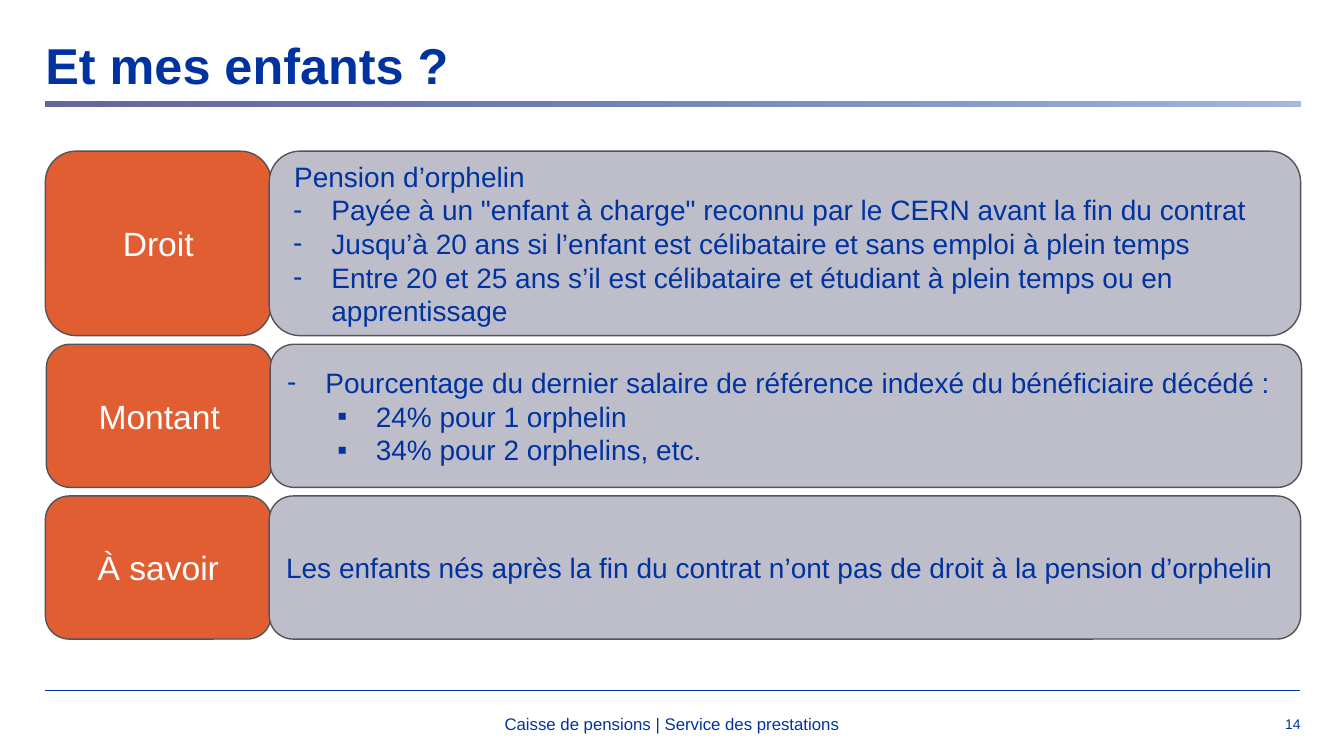
from lxml import etree
from pptx import Presentation
from pptx.dml.color import RGBColor
from pptx.enum.shapes import MSO_CONNECTOR, MSO_SHAPE
from pptx.enum.text import MSO_ANCHOR, PP_ALIGN
from pptx.oxml.ns import qn
from pptx.util import Inches, Pt

LEFT, MID, RIGHT, FULL = PP_ALIGN.LEFT, PP_ALIGN.CENTER, PP_ALIGN.RIGHT, PP_ALIGN.JUSTIFY
TOP, CENTER = MSO_ANCHOR.TOP, MSO_ANCHOR.MIDDLE
RECT, ROUND = MSO_SHAPE.RECTANGLE, MSO_SHAPE.ROUNDED_RECTANGLE
STRAIGHT = MSO_CONNECTOR.STRAIGHT
BLUE = RGBColor(0x00, 0x33, 0xA0)
PURPLE = RGBColor(0x66, 0x66, 0x99)
ORANGE = RGBColor(0xE1, 0x5E, 0x32)
GREY = RGBColor(0xBE, 0xBE, 0xCB)
EDGE = RGBColor(0x53, 0x53, 0x59)
WHITE = RGBColor(0xFF, 0xFF, 0xFF)

TITLE = "Et mes enfants ?"
FOOTER = "Caisse de pensions | Service des prestations"
NUMBER = "14"

# Each line: text, left indent, bullet, level
ROWS = [
    ("Droit", 0.45, 1.83, LEFT, [
        ("Pension d’orphelin", 0.06, None, 0),
        ("Payée à un \"enfant à charge\" reconnu par le CERN avant la fin du contrat", 0.43, "-", 0),
        ("Jusqu’à 20 ans si l’enfant est célibataire et sans emploi à plein temps", 0.43, "-", 0),
        ("Entre 20 et 25 ans s’il est célibataire et étudiant à plein temps ou en apprentissage", 0.43, "-", 0),
    ]),
    ("Montant", 0.46, 1.42, FULL, [
        ("Pourcentage du dernier salaire de référence indexé du bénéficiaire décédé :", 0.38, "-", 0),
        ("24% pour 1 orphelin", 0.88, "▪", 1),
        ("34% pour 2 orphelins, etc.", 0.88, "▪", 1),
    ]),
    ("À savoir", 0.45, 1.42, FULL, [
        ("Les enfants nés après la fin du contrat n’ont pas de droit à la pension d’orphelin", 0, None, 0),
    ]),
]
EDGE_X, WIDTH = 0.45, 12.44
START, GAP = 1.5, 0.085
LABEL_W, STEP, BODY_W = 2.24, 2.22, 10.23
HANG = 0.38

deck = Presentation()
deck.slide_width, deck.slide_height = Inches(13.33), Inches(7.5)
slide = deck.slides.add_slide(deck.slide_layouts[6])
shapes = slide.shapes


def place(x, y, w, h):
    return [Inches(v) for v in (x, y, w, h)]


def write(shape, lines, size=20, color=BLUE, bold=False, align=LEFT,
          anchor=CENTER, inset=None, spacing=None):
    frame = shape.text_frame
    frame.word_wrap = True
    frame.vertical_anchor = anchor
    if inset is not None:
        frame.margin_left = frame.margin_right = Inches(inset)
        frame.margin_top = frame.margin_bottom = Inches(inset)
    if isinstance(lines, str):
        lines = [(lines, 0, None, 0)]
    for i, (text, indent, mark, level) in enumerate(lines):
        para = frame.paragraphs[0] if i == 0 else frame.add_paragraph()
        para.alignment, para.level = align, level
        if spacing:
            para.line_spacing = spacing
        props = para._p.get_or_add_pPr()
        props.set("marL", str(Inches(indent)))
        props.set("indent", str(Inches(-HANG if mark else 0)))
        if mark:
            etree.SubElement(props, qn("a:buFont")).set("typeface", "Arial")
            etree.SubElement(props, qn("a:buChar")).set("char", mark)
        run = para.add_run()
        run.text = text
        font = run.font
        font.name, font.size, font.bold = "Arial", Pt(size), bold
        font.color.rgb = color


def add_card(x, y, w, h, fill):
    card = shapes.add_shape(ROUND, *place(x, y, w, h))
    card.shadow.inherit = False
    card.fill.solid()
    card.fill.fore_color.rgb = fill
    card.line.color.rgb = EDGE
    card.line.width = Pt(1)
    return card


def add_rule(y):
    rule = shapes.add_connector(STRAIGHT, Inches(EDGE_X), Inches(y),
                                Inches(EDGE_X + WIDTH), Inches(y))
    rule.line.color.rgb = BLUE
    rule.line.width = Pt(0.75)
    etree.SubElement(rule._element.spPr, qn("a:effectLst"))


def add_band():
    band = shapes.add_shape(RECT, *place(EDGE_X, 1.01, 12.45, 0.05))
    band.shadow.inherit = False
    band.line.fill.background()
    band.fill.gradient()
    band.fill.gradient_angle = 0
    for stop, color, spot in zip(band.fill.gradient_stops, (PURPLE, BLUE), (0, 1)):
        stop.color.rgb = color
        stop.position = spot
    last = band._element.spPr.findall(".//" + qn("a:srgbClr"))[-1]
    etree.SubElement(last, qn("a:alpha")).set("val", "35000")


add_rule(6.85)
write(shapes.add_textbox(*place(EDGE_X, 0.41, WIDTH, 1.17)), TITLE,
      size=36, bold=True, anchor=TOP, inset=0, spacing=0.9)
write(shapes.add_textbox(*place(12.15, 6.98, 0.75, 0.4)), NUMBER,
      size=10, align=RIGHT, inset=0)
write(shapes.add_textbox(*place(3.07, 6.98, 7.19, 0.4)), FOOTER,
      size=12, align=MID)
add_band()

y = START
for label, x, height, align, lines in ROWS:
    write(add_card(x, y, LABEL_W, height, ORANGE), label,
          size=24, color=WHITE, align=MID)
    write(add_card(x + STEP, y, BODY_W, height, GREY), lines, align=align)
    y += height + GAP

deck.save("out.pptx")
